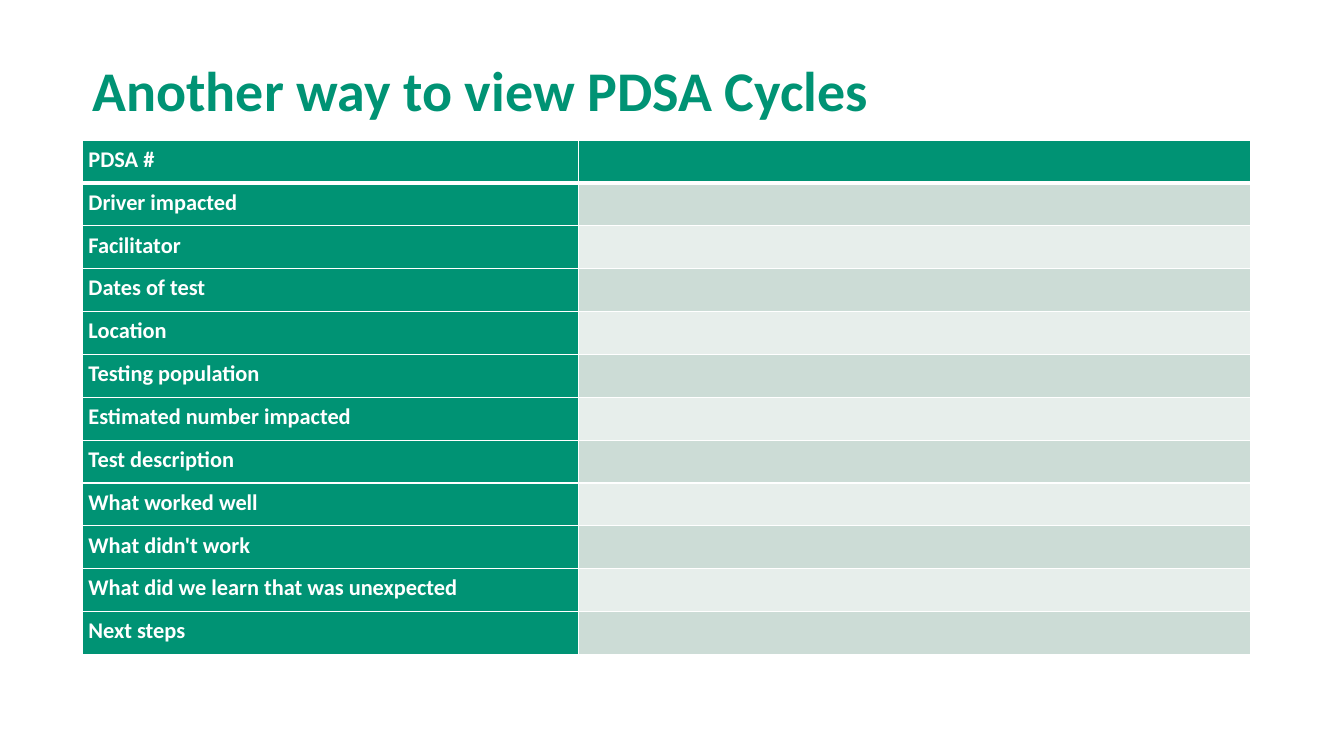
from lxml import etree
from pptx import Presentation
from pptx.dml.color import RGBColor
from pptx.enum.text import MSO_ANCHOR, MSO_AUTO_SIZE, PP_ALIGN
from pptx.oxml.ns import qn
from pptx.util import Cm, Pt

GREEN = RGBColor(0x00, 0x93, 0x74)
BAND_DARK = RGBColor(0xCC, 0xDC, 0xD6)
BAND_LIGHT = RGBColor(0xE7, 0xEE, 0xEB)
WHITE = RGBColor(0xFF, 0xFF, 0xFF)
FONT = "Calibri"

LABELS = [
    "PDSA #", "Driver impacted", "Facilitator", "Dates of test", "Location",
    "Testing population", "Estimated number impacted", "Test description",
    "What worked well", "What didn't work",
    "What did we learn that was unexpected", "Next steps",
]
LEFT, WIDTH = Cm(2.08), Cm(29.44)
LABEL_WIDTH = Cm(12.5)
ROW_HEIGHT = Cm(1.08)


def style_run(r, size, color):
    r.font.name = FONT
    r.font.size = Pt(size)
    r.font.bold = True
    r.font.color.rgb = color


def add_border(cell, side, width):
    ln = etree.SubElement(cell._tc.get_or_add_tcPr(), qn(f"a:ln{side}"), w=str(Pt(width)))
    fill = etree.SubElement(ln, qn("a:solidFill"))
    etree.SubElement(fill, qn("a:srgbClr"), val=str(WHITE))


prs = Presentation()
prs.slide_width, prs.slide_height = Cm(33.87), Cm(19.05)
s = prs.slides.add_slide(prs.slide_layouts[5])

# Title
title = s.shapes.title
title.left, title.top, title.width, title.height = LEFT, Cm(0.61), WIDTH, Cm(2.64)
tf = title.text_frame
tf.text = "Another way to view PDSA Cycles"
tf.auto_size = MSO_AUTO_SIZE.NONE
tf.vertical_anchor = MSO_ANCHOR.BOTTOM
p = tf.paragraphs[0]
p.alignment = PP_ALIGN.LEFT
p.line_spacing = 0.9
style_run(p.runs[0], 40, GREEN)

# PDSA table
table = s.shapes.add_table(len(LABELS), 2, LEFT, Cm(3.53), WIDTH,
                           ROW_HEIGHT * len(LABELS)).table
table.columns[0].width = LABEL_WIDTH
table.columns[1].width = WIDTH - LABEL_WIDTH

for i, label in enumerate(LABELS):
    table.rows[i].height = ROW_HEIGHT
    band = GREEN if i == 0 else BAND_DARK if i % 2 else BAND_LIGHT
    for cell, color in zip(table.rows[i].cells, (GREEN, band)):
        # White grid, thicker under the header row
        for side in "LRTB":
            thick = (i, side) in ((0, "B"), (1, "T"))
            add_border(cell, side, 3 if thick else 1)
        cell.fill.solid()
        cell.fill.fore_color.rgb = color
        cell.margin_left = cell.margin_right = Cm(0.15)
        cell.margin_top = cell.margin_bottom = Cm(0.15)
    cell = table.cell(i, 0)
    cell.text_frame.text = label
    style_run(cell.text_frame.paragraphs[0].runs[0], 16, WHITE)

prs.save("out.pptx")
